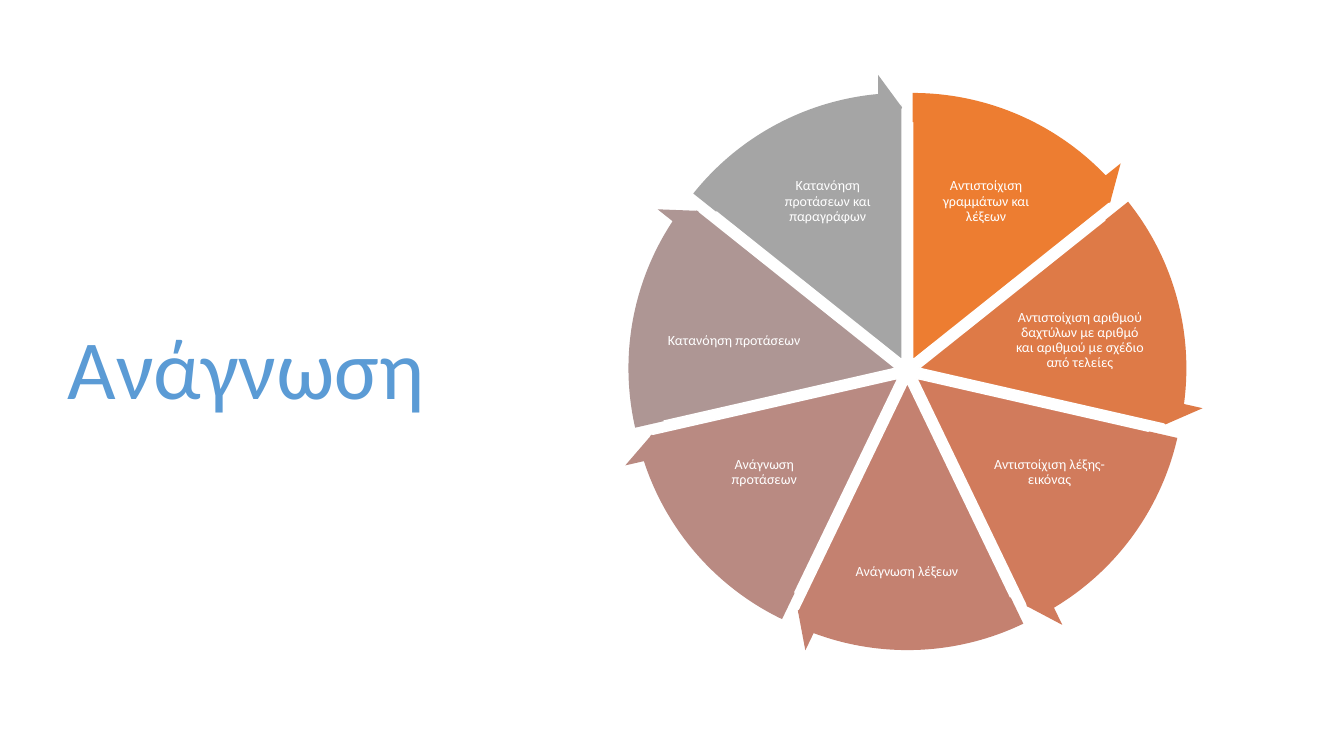
from math import cos, radians, sin

from pptx import Presentation
from pptx.dml.color import RGBColor
from pptx.enum.shapes import MSO_SHAPE
from pptx.enum.text import MSO_ANCHOR, PP_ALIGN
from pptx.util import Inches, Pt

WHITE = RGBColor(0xFF, 0xFF, 0xFF)
TITLE_BLUE = RGBColor(0x5B, 0x9B, 0xD5)

# Clockwise from the top: wording, slice colour, label box (left, top, width, height)
STEPS = [
    ("Αντιστοίχιση γραμμάτων και λέξεων", RGBColor(0xED, 0x7D, 0x31), (9.18, 1.52, 1.2, 0.96)),
    ("Αντιστοίχιση αριθμού δαχτύλων με αριθμό και αριθμού με σχέδιο από τελείες",
     RGBColor(0xDE, 0x7A, 0x47), (10.02, 2.96, 1.38, 0.84)),
    ("Αντιστοίχιση λέξης-εικόνας", RGBColor(0xD1, 0x7B, 0x5C), (9.81, 4.22, 1.2, 0.93)),
    ("Ανάγνωση λέξεων", RGBColor(0xC4, 0x81, 0x70), (8.41, 5.25, 1.17, 0.84)),
    ("Ανάγνωση προτάσεων", RGBColor(0xB9, 0x8A, 0x82), (6.98, 4.22, 1.2, 0.93)),
    ("Κατανόηση προτάσεων", RGBColor(0xAE, 0x96, 0x94), (6.59, 2.96, 1.38, 0.84)),
    ("Κατανόηση προτάσεων και παραγράφων", RGBColor(0xA5, 0xA5, 0xA5), (7.61, 1.52, 1.2, 0.96)),
]

# Wheel geometry: each slice is pushed out from the centre along its middle angle
CENTER_X, CENTER_Y = 9.0, 3.68
PUSH = 0.12
PIE_SIZE, ARROW_SIZE = 5.06, 5.68
SLICE_ANGLE = 360 / len(STEPS)
ARROW_SWEEP = 45.96
ADJUST_PER_DEGREE = 0.6  # shape adjustments count 60000ths of a degree in units of 100000

presentation = Presentation()
presentation.slide_width = Inches(13.33)
presentation.slide_height = Inches(7.5)
slide = presentation.slides.add_slide(presentation.slide_layouts[5])


def angle_adjustment(degrees):
    return degrees % 360 * ADJUST_PER_DEGREE


def add_wheel_part(preset, size, index, adjustments):
    middle = radians(-90 + (index + 0.5) * SLICE_ANGLE)
    left = CENTER_X + PUSH * cos(middle) - size / 2
    top = CENTER_Y + PUSH * sin(middle) - size / 2
    shape = slide.shapes.add_shape(preset, Inches(left), Inches(top), Inches(size), Inches(size))
    for position, value in enumerate(adjustments):
        shape.adjustments[position] = value
    shape.shadow.inherit = False
    shape.fill.solid()
    shape.fill.fore_color.rgb = STEPS[index][1]
    return shape


# Title
title = slide.shapes.title
title.left, title.top, title.width, title.height = map(Inches, (0.57, 0.68, 4.16, 6.02))
title.text_frame.text = "Ανάγνωση"
title.text_frame.vertical_anchor = MSO_ANCHOR.MIDDLE
paragraph = title.text_frame.paragraphs[0]
paragraph.alignment = PP_ALIGN.LEFT
paragraph.line_spacing = 0.9
paragraph.font.name = "Calibri"
paragraph.font.size = Pt(60)
paragraph.font.color.rgb = TITLE_BLUE

# Slices with their labels
for index, (wording, color, box) in enumerate(STEPS):
    start = 270 + index * SLICE_ANGLE
    pie = add_wheel_part(MSO_SHAPE.PIE, PIE_SIZE, index,
                         [angle_adjustment(start), angle_adjustment(start + SLICE_ANGLE)])
    pie.line.color.rgb = WHITE
    pie.line.width = Pt(1)

    label = slide.shapes.add_textbox(*map(Inches, box))
    frame = label.text_frame
    frame.word_wrap = True
    frame.vertical_anchor = MSO_ANCHOR.MIDDLE
    frame.margin_left = frame.margin_right = Inches(0.01)
    frame.margin_top = frame.margin_bottom = Inches(0.01)
    frame.text = wording
    paragraph = frame.paragraphs[0]
    paragraph.alignment = PP_ALIGN.CENTER
    paragraph.line_spacing = 0.9
    paragraph.font.name = "Calibri"
    paragraph.font.size = Pt(10)
    paragraph.font.color.rgb = WHITE

# Arrow along the rim of each slice
for index in range(len(STEPS)):
    start = 270 + index * SLICE_ANGLE
    arrow = add_wheel_part(MSO_SHAPE.CIRCULAR_ARROW, ARROW_SIZE, index,
                           [0.051, 3.275, angle_adjustment(start + ARROW_SWEEP),
                            angle_adjustment(start), 0.059])
    arrow.line.fill.background()

presentation.save("out.pptx")
